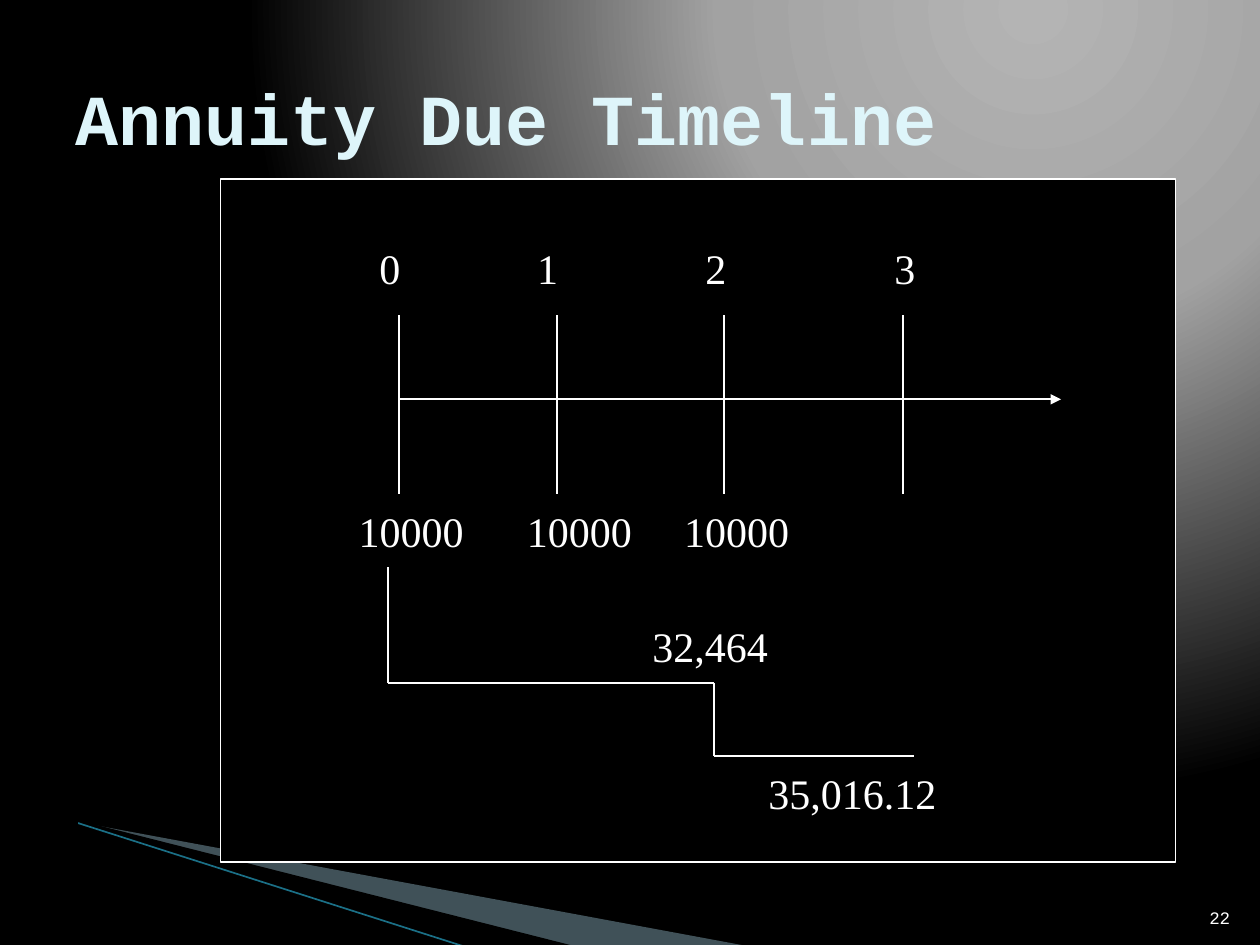
from itertools import pairwise

from lxml import etree
from pptx import Presentation
from pptx.dml.color import RGBColor
from pptx.enum.shapes import MSO_CONNECTOR as CONN, MSO_SHAPE as SHAPE
from pptx.enum.text import MSO_ANCHOR as ANCHOR, PP_ALIGN as ALIGN
from pptx.oxml import parse_xml
from pptx.oxml.ns import nsdecls, qn
from pptx.util import Cm, Pt

COLORS = {
    "black": "000000",
    "white": "FFFFFF",
    "title": "DEF5FA",
    "wedge": "A0CBDC",
    "teal": "1B7087",
    "glow": "B4B4B4",
    "mid": "A2A2A2",
}
MONO, SERIF = "Courier New", "Times New Roman"


def rgb(name):
    return RGBColor.from_string(COLORS[name])


def add_background(s):
    stops = "".join(
        f'<a:gs pos="{pos}"><a:srgbClr val="{COLORS[name]}"/></a:gs>'
        for pos, name in ((0, "glow"), (40000, "mid"), (100000, "black"))
    )
    bg = parse_xml(
        f'<p:bg {nsdecls("p", "a")}><p:bgPr><a:gradFill rotWithShape="1">'
        f'<a:gsLst>{stops}</a:gsLst><a:path path="circle">'
        '<a:fillToRect l="65000" t="0" r="0" b="98000"/></a:path></a:gradFill>'
        '<a:effectLst/></p:bgPr></p:bg>'
    )
    s.element.find(qn("p:cSld")).insert(0, bg)


def add_line(s, start, end, color="white", width=1, arrow=False):
    line = s.shapes.add_connector(CONN.STRAIGHT, *(Cm(v) for v in (*start, *end)))
    line.line.color.rgb = rgb(color)
    line.line.width = Pt(width)
    if arrow:
        etree.SubElement(line.line._get_or_add_ln(), qn("a:tailEnd"), type="triangle")
    etree.SubElement(line._element.spPr, qn("a:effectLst"))


def add_rect(s, box, line_color):
    sp = s.shapes.add_shape(SHAPE.RECTANGLE, *(Cm(v) for v in box))
    sp.shadow.inherit = False
    sp.fill.solid()
    sp.fill.fore_color.rgb = rgb("black")
    sp.line.color.rgb = rgb(line_color)
    sp.line.width = Pt(0.75)


def add_polygon(s, left, top, points, color, alpha=None):
    first, *rest = [(Cm(left + x), Cm(top + y)) for x, y in points]
    builder = s.shapes.build_freeform(*first)
    builder.add_line_segments(rest, close=True)
    sp = builder.convert_to_shape()
    sp.shadow.inherit = False
    sp.fill.solid()
    sp.fill.fore_color.rgb = rgb(color)
    sp.line.fill.background()
    if alpha:
        clr = sp._element.spPr.find(qn("a:solidFill"))[0]
        etree.SubElement(clr, qn("a:alpha"), val=str(alpha * 1000))


def add_text(s, box, text, size=24, font=SERIF, color="white", bold=False,
             anchor=ANCHOR.TOP, align=ALIGN.LEFT, tabs=(), margin_top=0.13):
    tf = s.shapes.add_textbox(*(Cm(v) for v in box)).text_frame
    tf.word_wrap = True
    tf.vertical_anchor = anchor
    tf.margin_top = Cm(margin_top)
    p = tf.paragraphs[0]
    p.text = text
    p.alignment = align
    if tabs:
        tab_list = etree.SubElement(p._p.get_or_add_pPr(), qn("a:tabLst"))
        for pos in tabs:
            etree.SubElement(tab_list, qn("a:tab"), pos=str(Cm(pos)), algn="l")
    p.font.size = Pt(size)
    p.font.name = font
    p.font.bold = bold
    p.font.color.rgb = rgb(color)


def add_corner_swoosh(s, left, top):
    add_polygon(s, left, top,
                [(0.05, 0.06), (13.76, 2.6), (10.23, 2.6), (0.05, 0.03)], "wedge", 40)
    add_polygon(s, left, top,
                [(0, 0), (10.26, 2.6), (8.1, 2.62), (0.02, 0.03)], "black")
    add_line(s, (left - 1.38, top - 0.4), (left + 8.07, top + 2.62), "teal", 0.95)
    add_rect(s, (0, 0, 1.57, 19), "black")


def add_timeline(s, left, top, width, height):
    def at(x, y):
        return left + x, top + y

    def label(x, y, w, text, tabs=()):
        add_text(s, (*at(x, y), w, 1.27), text, tabs=tabs, margin_top=0.23)

    add_rect(s, (left, top, width, height), "white")
    add_line(s, at(3.6, 4.44), at(16.94, 4.44), arrow=True)
    for x in (3.6, 6.78, 10.15, 13.76):
        add_line(s, at(x, 2.74), at(x, 6.35))
    label(2.53, 1.04, 12.7, "\t0\t1\t2\t3", (0.42, 3.6, 6.99, 10.8))
    label(2.53, 6.35, 12.9, "10000\t10000\t10000", (3.39, 6.56))

    steps = [(3.37, 7.82), (3.37, 10.16), (9.95, 10.16), (9.95, 11.63), (13.97, 11.63)]
    for start, end in pairwise(steps):
        add_line(s, at(*start), at(*end))
    label(8.45, 8.66, 3.81, "32,464")
    label(10.79, 11.63, 4.88, "35,016.12")


def main():
    prs = Presentation()
    prs.slide_width, prs.slide_height = Cm(25.4), Cm(19.05)
    s = prs.slides.add_slide(prs.slide_layouts[6])
    add_background(s)
    add_corner_swoosh(s, 1.35, 16.48)
    add_text(s, (24.03, 17.81, 1.02, 1.02), "22", 10, MONO,
             anchor=ANCHOR.BOTTOM, align=ALIGN.RIGHT)
    add_text(s, (1.27, 0.76, 22.86, 3.18), "Annuity Due Timeline", 41, MONO,
             "title", bold=True, anchor=ANCHOR.MIDDLE)
    add_timeline(s, 4.45, 3.61, 19.25, 13.77)
    prs.save("out.pptx")


if __name__ == "__main__":
    main()
